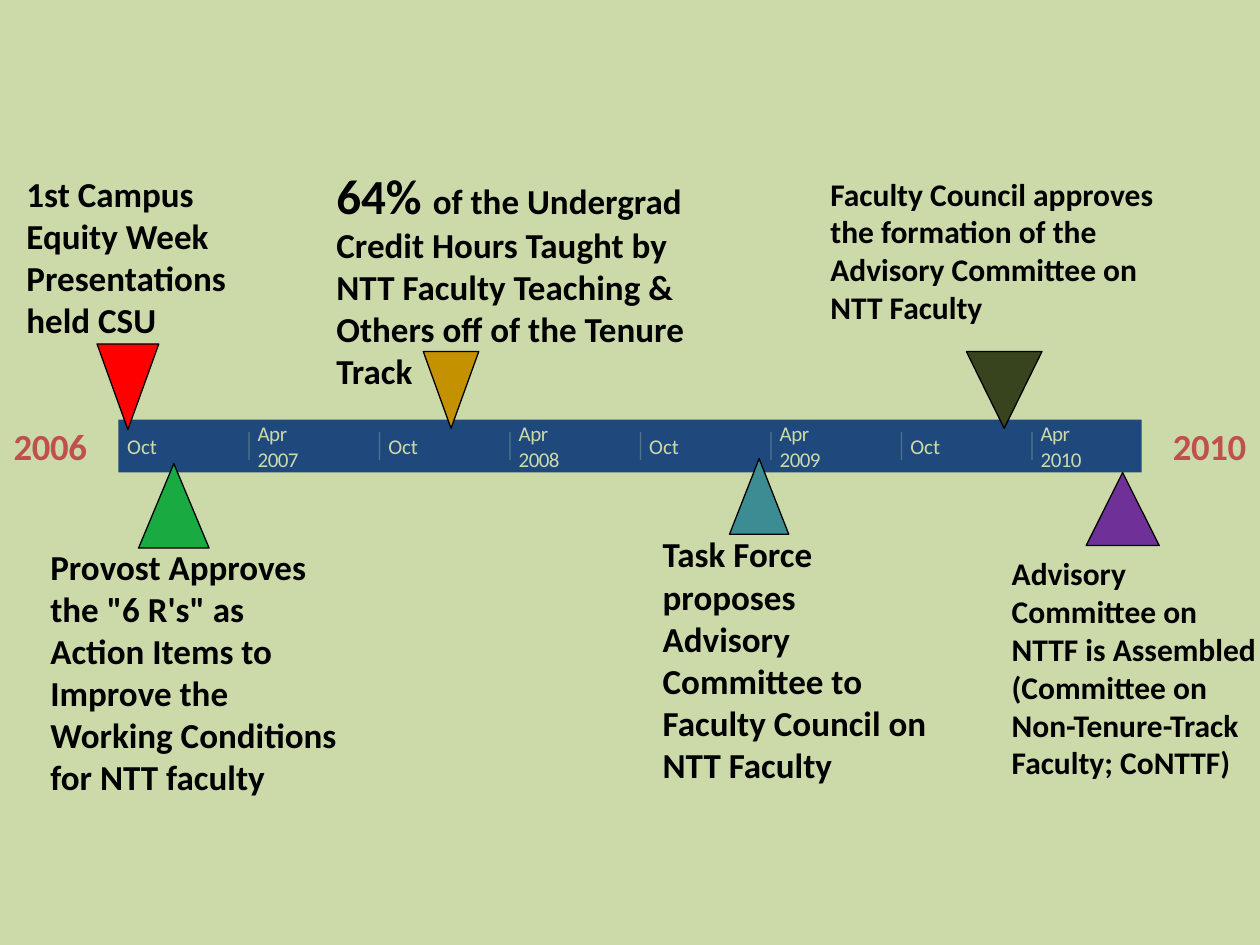
from lxml.etree import SubElement
from pptx import Presentation
from pptx.dml.color import RGBColor
from pptx.enum.shapes import MSO_CONNECTOR, MSO_SHAPE
from pptx.enum.text import MSO_ANCHOR, PP_ALIGN
from pptx.oxml.ns import qn
from pptx.util import Inches, Pt

COLORS = {
    "background": "CCDAAA",
    "bar": "1F497D",
    "year": "C0504D",
    "black": "000000",
    "red": "FF0000",
    "gold": "C49100",
    "olive": "38441D",
    "green": "1AAA42",
    "teal": "3C8C93",
    "purple": "6F3198",
}


def color(name):
    return RGBColor.from_string(COLORS[name])


def add_label(slide, box, runs, color_name, bold=True, align=PP_ALIGN.LEFT, spacing=0):
    """Add a text box from (text, size) runs; spacing is in hundredths of a point."""
    text_frame = slide.shapes.add_textbox(*map(Inches, box)).text_frame
    text_frame.word_wrap = True
    text_frame.vertical_anchor = MSO_ANCHOR.MIDDLE
    text_frame.margin_left = text_frame.margin_right = 0
    text_frame.margin_top = text_frame.margin_bottom = 0
    paragraph = text_frame.paragraphs[0]
    paragraph.text = "".join(text for text, size in runs) if len(runs) == 1 else ""
    paragraph.alignment = align
    if len(runs) > 1:
        for text, size in runs:
            paragraph.add_run().text = text
    # A line break splits a single text into several runs of the same size
    sizes = [size for text, size in runs] * (len(paragraph.runs) // len(runs))
    for run, size in zip(paragraph.runs, sizes):
        run.font.name = "Calibri"
        run.font.size = Pt(size)
        run.font.bold = bold
        run.font.color.rgb = color(color_name)
        if spacing:
            run.font._element.set("spc", str(spacing))


presentation = Presentation()
presentation.slide_width = Inches(10)
presentation.slide_height = Inches(7.5)
slide = presentation.slides.add_slide(presentation.slide_layouts[6])
slide.background.fill.solid()
slide.background.fill.fore_color.rgb = color("background")

# Years at both ends of the timeline
for left, year in ((0, "2006"), (9.2, "2010")):
    add_label(slide, (left, 3.36, 0.8, 0.35), [(year, 21)], "year",
              align=PP_ALIGN.CENTER, spacing=-20)

# Timeline bar with half-year divisions
bar_left = 0.94
bar = slide.shapes.add_shape(MSO_SHAPE.RECTANGLE, Inches(bar_left), Inches(3.33),
                             Inches(8.12), Inches(0.42))
bar.shadow.inherit = False
bar.fill.solid()
bar.fill.fore_color.rgb = color("bar")
bar.line.fill.background()

half_year = 7.25 / 7
for index in range(8):
    left = bar_left + index * half_year
    if index:
        tick = slide.shapes.add_connector(MSO_CONNECTOR.STRAIGHT, Inches(left), Inches(3.43),
                                          Inches(left), Inches(3.65))
        tick.line.width = Pt(0.75)
        tick.line.color.rgb = color("background")
        properties = tick._element.spPr
        tick_color = next(properties.iter(qn("a:srgbClr")))
        SubElement(tick_color, qn("a:alpha")).set("val", "30000")
        SubElement(properties, qn("a:effectLst"))
    if index % 2:
        add_label(slide, (left + 0.07, 3.4, 0.36, 0.28), [(f"Apr\v{2007 + index // 2}", 12)],
                  "background", bold=False, spacing=-30)
    else:
        add_label(slide, (left + 0.07, 3.44, 0.25, 0.2), [("Oct", 12)],
                  "background", bold=False)

# Events: text box, text runs, marker box, marker color, marker points down
events = [
    ((0.21, 1.36, 1.61, 1.35),
     [("1st Campus Equity Week Presentations held CSU", 20)],
     (0.77, 2.73, 0.49, 0.68), "red", True),
    ((2.67, 1.3, 2.78, 1.82),
     [("64% ", 28), ("of the Undergrad Credit Hours Taught by NTT Faculty Teaching & "
                     "Others off of the Tenure Track", 20)],
     (3.36, 2.79, 0.44, 0.61), "gold", True),
    ((6.59, 1.38, 2.69, 1.21),
     [("Faculty Council approves the formation of the Advisory Committee on NTT Faculty", 18)],
     (7.67, 2.79, 0.6, 0.61), "olive", True),
    ((0.4, 4.32, 2.33, 2.02),
     [("Provost Approves the \"6 R's\" as Action Items to Improve the Working Conditions "
       "for NTT faculty", 20)],
     (1.1, 3.68, 0.56, 0.67), "green", False),
    ((5.26, 4.22, 2.1, 2.02),
     [("Task Force proposes Advisory Committee to Faculty Council on NTT Faculty", 20)],
     (5.79, 3.64, 0.47, 0.6), "teal", False),
    ((8.03, 4.39, 2.04, 1.82),
     [("Advisory Committee on NTTF is Assembled (Committee on Non-Tenure-Track Faculty; "
       "CoNTTF)", 18)],
     (8.62, 3.75, 0.58, 0.58), "purple", False),
]
for text_box, runs, marker_box, marker_color, points_down in events:
    add_label(slide, text_box, runs, "black")
    marker = slide.shapes.add_shape(MSO_SHAPE.ISOSCELES_TRIANGLE, *map(Inches, marker_box))
    marker.shadow.inherit = False
    marker.fill.solid()
    marker.fill.fore_color.rgb = color(marker_color)
    marker.line.color.rgb = color("black")
    marker.line.width = Pt(0.75)
    if points_down:
        marker._element.spPr.xfrm.set("flipV", "1")

presentation.save("out.pptx")
